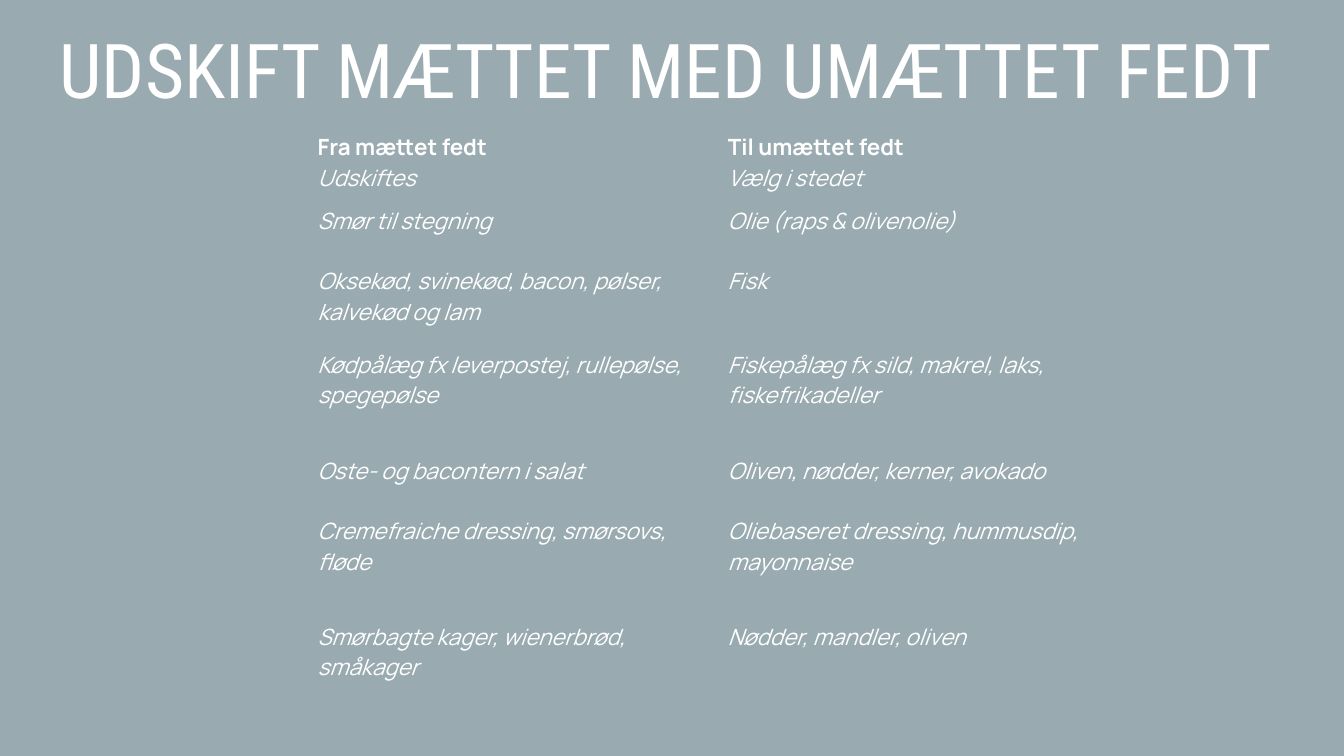
"""Build a slide on replacing saturated fat with unsaturated fat."""
from dataclasses import dataclass

from pptx import Presentation
from pptx.dml.color import RGBColor
from pptx.enum.text import MSO_ANCHOR, MSO_AUTO_SIZE, PP_ALIGN
from pptx.oxml.ns import qn
from pptx.slide import Slide
from pptx.table import _Cell
from pptx.text.text import TextFrame, _Paragraph
from pptx.util import Inches, Pt

TOP = MSO_ANCHOR.TOP
LEFT = PP_ALIGN.LEFT
NO_AUTOFIT = MSO_AUTO_SIZE.NONE

WHITE = RGBColor(0xFF, 0xFF, 0xFF)
BLUE_GREY = RGBColor(0x99, 0xAA, 0xB0)
TITLE_FONT = "Roboto Condensed"
BODY_FONT = "Manrope"
PLAIN_TABLE_STYLE = "{2D5ABB26-0587-4C30-8999-92F81FD0307C}"
COLUMN_WIDTH = 4.07
CELL_MARGIN = 0.06


@dataclass(frozen=True)
class Swap:
    """One table row: what to replace, what to choose and the row height."""
    saturated: str
    unsaturated: str
    height: float


HEADINGS = (("Fra mættet fedt", "Udskiftes"), ("Til umættet fedt", "Vælg i stedet"))
HEADING_HEIGHT = 0.6
SWAPS = (
    Swap("Smør til stegning", "Olie (raps & olivenolie)", 0.6),
    Swap("Oksekød, svinekød, bacon, pølser, kalvekød og lam", "Fisk", 0.83),
    Swap("Kødpålæg fx leverpostej, rullepølse, spegepølse",
         "Fiskepålæg fx sild, makrel, laks, fiskefrikadeller", 1.05),
    Swap("Oste- og bacontern i salat", "Oliven, nødder, kerner, avokado", 0.6),
    Swap("Cremefraiche dressing, smørsovs, fløde",
         "Oliebaseret dressing, hummusdip, mayonnaise", 1.05),
    Swap("Smørbagte kager, wienerbrød, småkager", "Nødder, mandler, oliven", 0.83),
)


def write(paragraph: _Paragraph, text: str, *, font: str = BODY_FONT, size: float = 16,
          bold: bool = False, italic: bool = False) -> None:
    """Add white, left-aligned text to a paragraph."""
    paragraph.alignment = LEFT
    run = paragraph.add_run()
    run.text = text
    run.font.name = font
    run.font.size = Pt(size)
    run.font.bold = bold
    run.font.italic = italic
    run.font.color.rgb = WHITE


def set_margins(target: TextFrame | _Cell, margin: float) -> None:
    """Give a text frame or cell the same margin on all sides."""
    target.margin_left = target.margin_right = Inches(margin)
    target.margin_top = target.margin_bottom = Inches(margin)


def add_title(slide: Slide, text: str) -> None:
    """Place and format the title placeholder."""
    title = slide.shapes.title
    title.left, title.top = Inches(0.59), Inches(0.38)
    title.width, title.height = Inches(12.15), Inches(1.38)
    frame = title.text_frame
    set_margins(frame, 0)
    frame.word_wrap = True
    frame.auto_size = NO_AUTOFIT
    frame.vertical_anchor = TOP
    paragraph = frame.paragraphs[0]
    paragraph.line_spacing = 0.83
    paragraph.space_before = Pt(0)
    write(paragraph, text, font=TITLE_FONT, size=54)


def add_swap_table(slide: Slide) -> None:
    """Add the unstyled two-column table of swaps."""
    heights = [HEADING_HEIGHT, *(swap.height for swap in SWAPS)]
    table = slide.shapes.add_table(
        len(heights), 2, Inches(3.09), Inches(1.25),
        Inches(2 * COLUMN_WIDTH), Inches(sum(heights))).table
    table.first_row = False
    table.horz_banding = False
    table._tbl.tblPr.find(qn("a:tableStyleId")).text = PLAIN_TABLE_STYLE
    for column in table.columns:
        column.width = Inches(COLUMN_WIDTH)
    for row, height in zip(table.rows, heights):
        row.height = Inches(height)
    for cell in table.iter_cells():
        cell.fill.background()
        cell.vertical_anchor = TOP
        set_margins(cell, CELL_MARGIN)
    for column_index, (heading, instruction) in enumerate(HEADINGS):
        frame = table.cell(0, column_index).text_frame
        write(frame.paragraphs[0], heading, bold=True)
        write(frame.add_paragraph(), instruction, italic=True)
    for row_index, swap in enumerate(SWAPS, start=1):
        for column_index, text in enumerate((swap.saturated, swap.unsaturated)):
            frame = table.cell(row_index, column_index).text_frame
            write(frame.paragraphs[0], text, italic=True)


def main() -> None:
    """Create and save the presentation."""
    presentation = Presentation()
    presentation.slide_width = Inches(13.33)
    presentation.slide_height = Inches(7.5)
    slide = presentation.slides.add_slide(presentation.slide_layouts[5])
    background = slide.background.fill
    background.solid()
    background.fore_color.rgb = BLUE_GREY
    add_title(slide, "UDSKIFT MÆTTET MED UMÆTTET FEDT")
    add_swap_table(slide)
    presentation.save("out.pptx")


if __name__ == "__main__":
    main()
